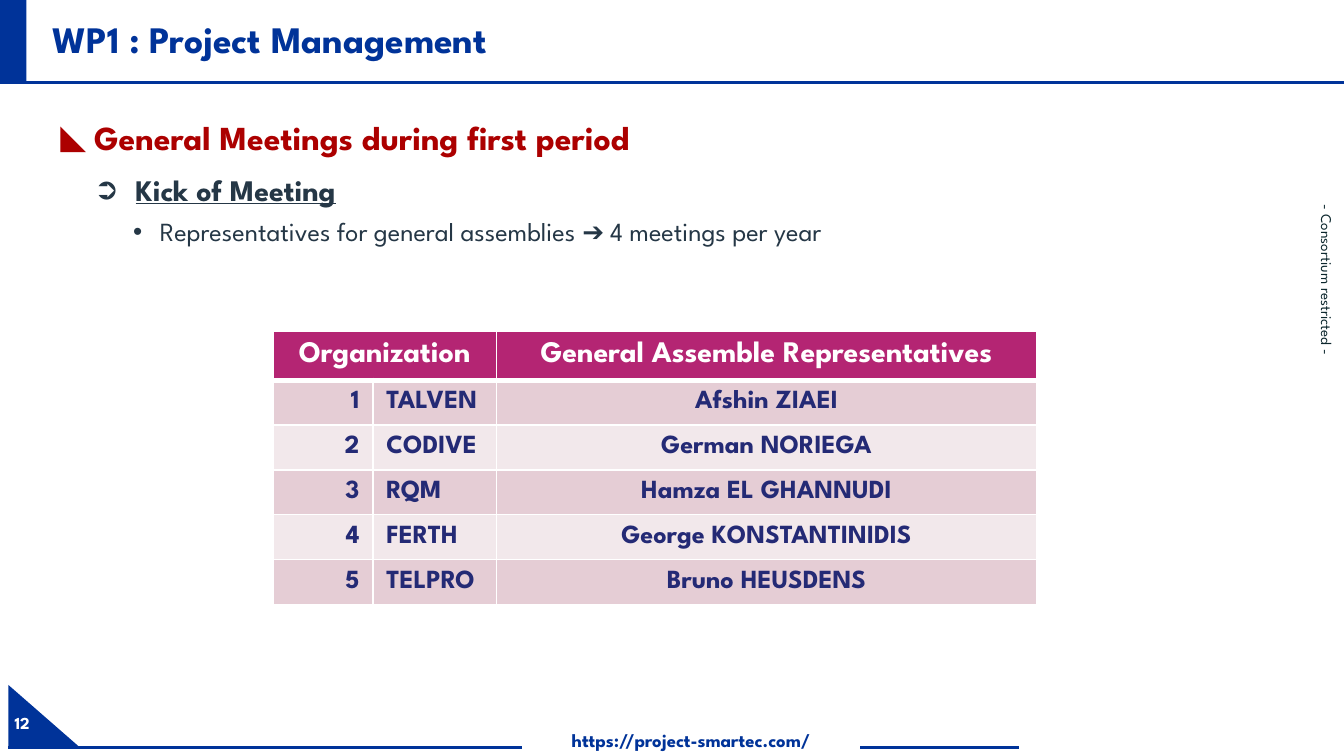
from lxml import etree
from pptx import Presentation
from pptx.dml.color import RGBColor
from pptx.enum import shapes, text
from pptx.oxml import ns
from pptx.util import Pt

FONT = "League Spartan"
BLUE, RED, SLATE, NAVY, WHITE = "003399", "AC0000", "253746", "242A75", "FFFFFF"
ALIGN = text.PP_ALIGN


def format_font(font, size, colour, bold=False):
    font.name, font.size, font.bold = FONT, Pt(size), bold
    font.color.rgb = RGBColor.from_string(colour)


def add_element(parent, tag, **attributes):
    return etree.SubElement(parent, ns.qn(tag), attributes)


presentation = Presentation()
presentation.slide_width, presentation.slide_height = Pt(720), Pt(405)
slide = presentation.slides.add_slide(presentation.slide_layouts[1])

# Title
title = slide.shapes.title
title.left, title.top, title.width, title.height = Pt(20.9), Pt(0), Pt(683), Pt(44)
frame = title.text_frame
frame.text = "WP1 : Project Management"
frame.auto_size = text.MSO_AUTO_SIZE.NONE
frame.vertical_anchor = text.MSO_ANCHOR.MIDDLE
paragraph = frame.paragraphs[0]
paragraph.alignment, paragraph.line_spacing = ALIGN.LEFT, 0.9
format_font(paragraph.runs[0].font, 20, BLUE, True)

# Bulleted list: text, size, colour, bold, underline, bullet, margin, indent, before, after
items = [
    ("General Meetings during first period", 18, RED, True, False, "◣", 28.8, -18, 0, 5.2),
    ("Kick of Meeting", 16, SLATE, True, True, "➲", 51.1, -22.3, 2.2, 4.5),
    ("Representatives for general assemblies ➔ 4 meetings per year",
     14, SLATE, False, False, "•", 64.1, -14.4, 0, 1.5),
]
body = slide.placeholders[1]
body.left, body.top, body.width, body.height = Pt(14.4), Pt(59.2), Pt(690), Pt(90)
frame = body.text_frame
frame.text = "\n".join(item[0] for item in items)
frame.auto_size = text.MSO_AUTO_SIZE.NONE
for level, (paragraph, item) in enumerate(zip(frame.paragraphs, items)):
    _, size, colour, bold, underline, bullet, margin, indent, before, after = item
    paragraph.level = level
    paragraph.space_before, paragraph.space_after = Pt(before), Pt(after)
    properties = paragraph._p.get_or_add_pPr()
    properties.set("marL", str(Pt(margin)))
    properties.set("indent", str(Pt(indent)))
    add_element(add_element(properties, "a:buClr"), "a:srgbClr", val=colour)
    add_element(properties, "a:buChar", char=bullet)
    font = paragraph.runs[0].font
    format_font(font, size, colour, bold)
    font.underline = underline

# Blue corner shapes
for kind, left, top, width, height in [
    (shapes.MSO_SHAPE.RIGHT_TRIANGLE, 4.5, 367, 38.7, 33.8),
    (shapes.MSO_SHAPE.RECTANGLE, 0, -1.2, 14.2, 45.2),
]:
    shape = slide.shapes.add_shape(kind, Pt(left), Pt(top), Pt(width), Pt(height))
    shape.shadow.inherit = False
    shape.fill.solid()
    shape.fill.fore_color.rgb = RGBColor.from_string(BLUE)
    shape.line.fill.background()

# Slide number, web address and side note
labels = []
for wording, box, insets, size, colour, bold, alignment, anchor in [
    ("12", (2.9, 376.6, 31, 21.6), (5, 2.9), 9, WHITE, True, ALIGN.LEFT, text.MSO_ANCHOR.MIDDLE),
    ("https://project-smartec.com/", (279.4, 390.2, 181.4, 20.2), (7.2, 0),
     10, BLUE, True, ALIGN.CENTER, text.MSO_ANCHOR.TOP),
    ("- Consortium restricted -", (703, 110, 16, 80), (0, 0),
     8, "0C272D", False, ALIGN.CENTER, text.MSO_ANCHOR.MIDDLE),
]:
    label = slide.shapes.add_textbox(*map(Pt, box))
    frame = label.text_frame
    frame.text = wording
    frame.word_wrap = True
    frame.vertical_anchor = anchor
    frame.margin_left = frame.margin_right = Pt(insets[0])
    frame.margin_top = frame.margin_bottom = Pt(insets[1])
    frame.paragraphs[0].alignment = alignment
    format_font(frame.paragraphs[0].runs[0].font, size, colour, bold)
    labels.append(label)
number, address, side_note = labels
side_note.text_frame.word_wrap = False
side_note.text_frame._txBody.bodyPr.set("vert", "vert")

# Rules
rules = []
for start, end, height in [(-0.7, 720, 44.3), (4.5, 279.4, 400.3), (460.8, 545.8, 400.3)]:
    rule = slide.shapes.add_connector(
        shapes.MSO_CONNECTOR.STRAIGHT, Pt(start), Pt(height), Pt(end), Pt(height))
    rule.line.color.rgb = RGBColor.from_string(BLUE)
    rule.line.width = Pt(1.5)
    add_element(rule._element.spPr, "a:effectLst")
    rules.append(rule)
rules[1].end_connect(address, 1)
rules[2].begin_connect(address, 3)

# Representatives table
rows = [
    ("Organization", "", "General Assemble Representatives"),
    ("1", "TALVEN", "Afshin ZIAEI"),
    ("2", "CODIVE", "German NORIEGA"),
    ("3", "RQM", "Hamza EL GHANNUDI"),
    ("4", "FERTH", "George KONSTANTINIDIS"),
    ("5", "TELPRO", "Bruno HEUSDENS"),
]
table = slide.shapes.add_table(
    len(rows), 3, Pt(146.2), Pt(177.2), Pt(409.2), Pt(123)).table
for column, width in zip(table.columns, (53.6, 66.2, 289.4)):
    column.width = Pt(width)
table.cell(0, 0).merge(table.cell(0, 1))
for i, row in enumerate(rows):
    header = i == 0
    table.rows[i].height = Pt(22 if header else 20.2)
    fill = "B42573" if header else ("F2E8EB", "E5CDD5")[i % 2]
    for j, wording in enumerate(row):
        cell = table.cell(i, j)
        cell.vertical_anchor = text.MSO_ANCHOR.MIDDLE
        properties = cell._tc.get_or_add_tcPr()
        for side in ("L", "R", "T", "B"):
            thick = (header and side == "B") or (i == 1 and side == "T")
            border = add_element(properties, f"a:ln{side}", w=str(Pt(3 if thick else 1)))
            add_element(add_element(border, "a:solidFill"), "a:srgbClr", val=WHITE)
        cell.fill.solid()
        cell.fill.fore_color.rgb = RGBColor.from_string(fill)
        if wording:
            cell.text = wording
            paragraph = cell.text_frame.paragraphs[0]
            paragraph.alignment = (
                ALIGN.CENTER if header else (ALIGN.RIGHT, ALIGN.LEFT, ALIGN.CENTER)[j])
            format_font(paragraph.runs[0].font, 16 if header else 14,
                        WHITE if header else NAVY, True)

presentation.save("out.pptx")
